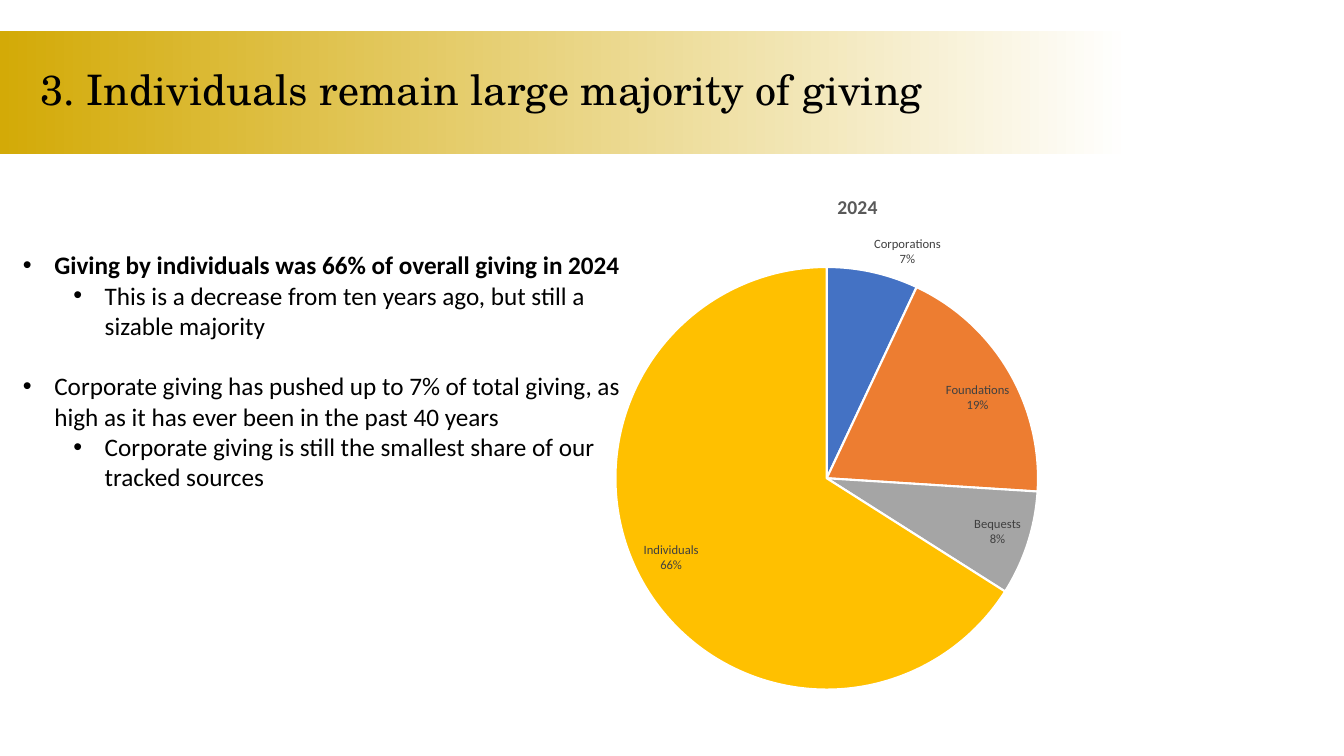
from lxml.etree import SubElement as Sub
from pptx import Presentation
from pptx.chart.data import CategoryChartData as Data
from pptx.dml.color import RGBColor as RGB
from pptx.enum.chart import XL_CHART_TYPE as Kind, XL_LABEL_POSITION as Place
from pptx.enum.shapes import MSO_SHAPE as Shape
from pptx.enum.text import MSO_ANCHOR as Anchor
from pptx.oxml import parse_xml
from pptx.oxml.ns import nsdecls, qn
from pptx.util import Cm, Pt

GOLD = RGB(0xD3, 0xAA, 0x07)
WHITE = RGB(0xFF, 0xFF, 0xFF)
BLACK = RGB(0, 0, 0)
GRAY = RGB(0x59, 0x59, 0x59)
DARK = RGB(0x40, 0x40, 0x40)
SLICES = [
    ("Corporations", 0.07, RGB(0x44, 0x72, 0xC4)),
    ("Foundations", 0.19, RGB(0xED, 0x7D, 0x31)),
    ("Bequests", 0.08, RGB(0xA5, 0xA5, 0xA5)),
    ("Individuals", 0.66, RGB(0xFF, 0xC0, 0x00)),
]
# Level, bold, points before, text
POINTS = [
    (0, True, 0, "Giving by individuals was 66% of overall giving in 2024"),
    (1, False, 0, "This is a decrease from ten years ago, but still a sizable majority"),
    (0, False, 21.6, "Corporate giving has pushed up to 7% of total giving, "
                     "as high as it has ever been in the past 40 years"),
    (1, False, 0, "Corporate giving is still the smallest share of our tracked sources"),
]


def style(font, size, color, name="Calibri", bold=False):
    look = {"size": Pt(size), "name": name, "bold": bold}
    for key, value in look.items():
        setattr(font, key, value)
    font.color.rgb = color


def add_band(slide, *area):
    band = slide.shapes.add_shape(Shape.RECTANGLE, *map(Cm, area))
    band.shadow.inherit = False
    band.line.fill.background()
    band.fill.gradient()
    band.fill.gradient_angle = 0
    stops = [(0, GOLD), (0.98, WHITE)]
    for stop, (spot, color) in zip(band.fill.gradient_stops, stops):
        stop.position = spot
        stop.color.rgb = color


def add_box(slide, *area):
    frame = slide.shapes.add_textbox(*map(Cm, area)).text_frame
    frame.word_wrap = True
    return frame


def add_title(slide, text, *area):
    frame = add_box(slide, *area)
    frame.vertical_anchor = Anchor.MIDDLE
    para = frame.paragraphs[0]
    para.text = text
    para.line_spacing = 0.9
    style(para.font, 30, BLACK, "TeX Gyre Schola")


def add_list(slide, points, *area):
    frame = add_box(slide, *area)
    for i, (level, bold, gap, text) in enumerate(points):
        para = frame.add_paragraph() if i else frame.paragraphs[0]
        para.text = text
        para.level = level
        props = para._p.get_or_add_pPr()
        props.set("marL", str(Cm(0.79 + 1.27 * level)))
        props.set("indent", str(-Cm(0.79)))
        Sub(props, qn("a:buFont"), typeface="Arial")
        Sub(props, qn("a:buChar"), char="•")
        if gap:
            para.space_before = Pt(gap)
        style(para.font, 18, BLACK, bold=bold)


def set_layout(node, index, **sizes):
    """Place a chart part by fractions of the chart's width and height."""
    for old in node.findall(qn("c:layout")):
        node.remove(old)
    layout = parse_xml(f"<c:layout {nsdecls('c')}><c:manualLayout/></c:layout>")
    for key, value in sizes.items():
        Sub(layout[0], qn(f"c:{key}"), val=str(value))
    node.insert(index, layout)


def add_labels(series):
    labels = series.data_labels
    look = {"show_value": True, "show_category_name": True,
            "number_format": "0%", "number_format_is_linked": False,
            "position": Place.BEST_FIT}
    for key, value in look.items():
        setattr(labels, key, value)
    style(labels.font, 9, DARK)
    mark = parse_xml(f"<c:separator {nsdecls('c')}>\n</c:separator>")
    labels._element.find(qn("c:showBubbleSize")).addnext(mark)


def add_pie(slide, title, slices, *area):
    names, shares, colors = zip(*slices)
    data = Data(number_format="0%")
    data.categories = names
    data.add_series("Series 1", shares)
    chart = slide.shapes.add_chart(Kind.PIE, *map(Cm, area), data).chart
    style(chart.font, 10, BLACK)
    chart.has_legend = False
    chart.has_title = True
    para = chart.chart_title.text_frame.paragraphs[0]
    para.text = title
    style(para.runs[0].font, 14, GRAY, bold=True)
    set_layout(chart.element.xpath(".//c:chart/c:title")[0], 1,
               xMode="edge", yMode="edge", x=0.47, y=0.04)
    set_layout(chart.element.xpath(".//c:plotArea")[0], 0,
               layoutTarget="inner", xMode="edge", yMode="edge",
               x=0.16, y=0.18, w=0.6, h=0.79)
    plot = chart.plots[0]
    plot.vary_by_categories = True
    series = plot.series[0]
    for i, color in enumerate(colors):
        shape = series.points[i].format
        shape.fill.solid()
        shape.fill.fore_color.rgb = color
        shape.line.color.rgb = WHITE
        shape.line.width = Pt(1.5)
    add_labels(series)


def main():
    deck = Presentation()
    deck.slide_width, deck.slide_height = Cm(33.87), Cm(19.05)
    slide = deck.slides.add_slide(deck.slide_layouts[6])
    add_band(slide, 0, 0.79, 29.06, 3.1)
    add_title(slide, "3. Individuals remain large majority of giving",
              0.76, 1.22, 29.21, 2.18)
    add_list(slide, POINTS, 0.33, 6.17, 15.93, 6.4)
    add_pie(slide, "2024", SLICES, 12.67, 4.24, 17.75, 13.59)
    deck.save("out.pptx")


if __name__ == "__main__":
    main()
